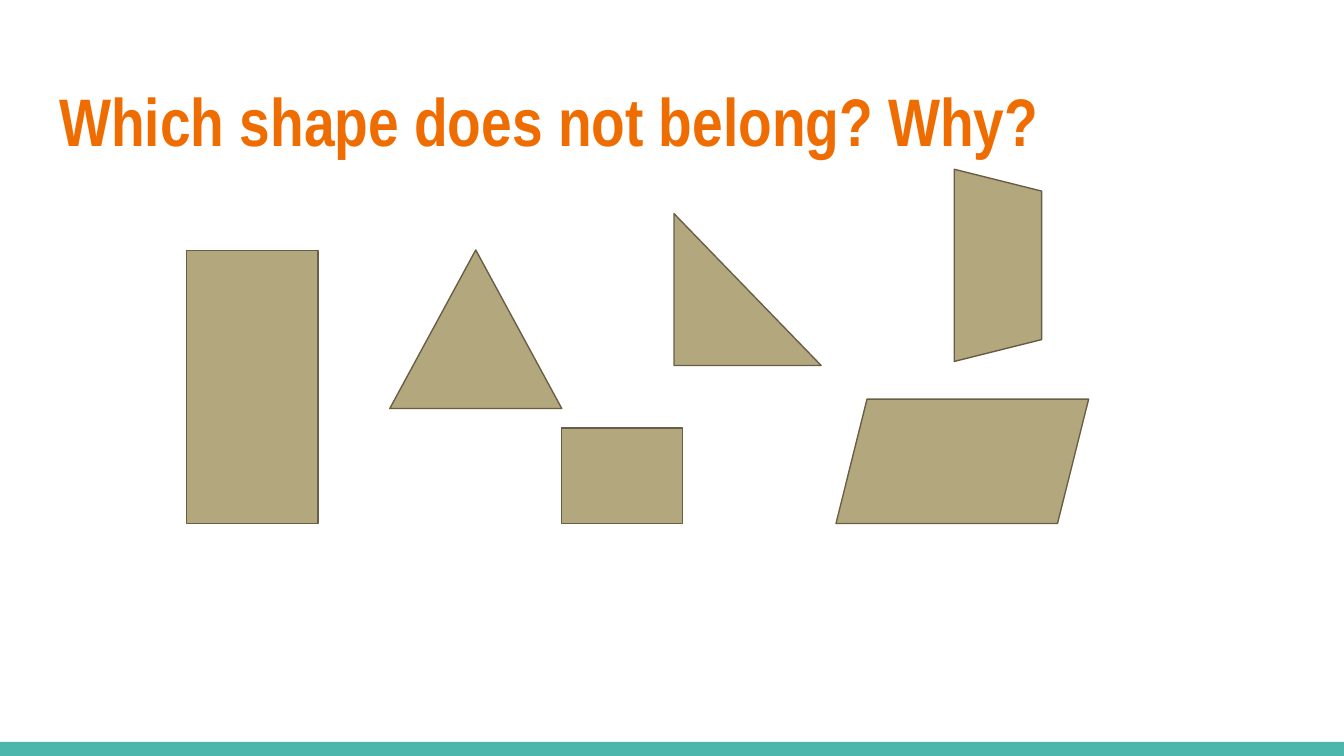
from pptx import Presentation
from pptx.dml.color import RGBColor
from pptx.enum.shapes import MSO_SHAPE as Shape
from pptx.enum.text import MSO_ANCHOR as Anchor, PP_ALIGN as Align
from pptx.util import Inches, Pt

COLORS = {"bar": "4DB6AC", "title": "EF6C00", "shape": "B3A77D", "outline": "695D46"}

deck = Presentation()
deck.slide_width = Inches(10)
deck.slide_height = deck.slide_width * 9 // 16
column = row = deck.slide_width / 100


def grid(left, top, width, height):
    return [int(left * column), int(top * row), int(width * column), int(height * row)]


def add_figure(kind, place, fill, outline=None, rotation=0):
    figure = page.shapes.add_shape(kind, *grid(*place))
    figure.shadow.inherit = False
    figure.rotation = rotation
    figure.fill.solid()
    figure.fill.fore_color.rgb = RGBColor.from_string(COLORS[fill])
    if outline:
        figure.line.color.rgb = RGBColor.from_string(COLORS[outline])
        figure.line.width = Pt(0.75)
    else:
        figure.line.fill.background()


page = deck.slides.add_slide(deck.slide_layouts[5])
add_figure(Shape.RECTANGLE, (0, 55.2, 100, 1.05), "bar")

title = page.shapes.title
title.left, title.top, title.width, title.height = grid(3.4, 4.9, 93.2, 7.7)
box = title.text_frame
box_format = {"vertical_anchor": Anchor.MIDDLE, "word_wrap": True}
box_format.update({f"margin_{side}": Inches(0.1) for side in ("left", "top", "right", "bottom")})
for name, value in box_format.items():
    setattr(box, name, value)

para = box.paragraphs[0]
para.alignment = Align.LEFT
para.line_spacing = 1.05
span = para.add_run()
span.text = "Which shape does not belong? Why?"
for name, value in {"name": "Arial Narrow", "size": Pt(36), "bold": True}.items():
    setattr(span.font, name, value)
span.font.color.rgb = RGBColor.from_string(COLORS["title"])

figures = [
    (Shape.RECTANGLE, (8.6, 23.9, 20.3, 9.8), 90),
    (Shape.PARALLELOGRAM, (62.2, 29.7, 18.8, 9.25), 0),
    (Shape.TRAPEZOID, (67.1, 16.5, 14.3, 6.5), 90),
    (Shape.ISOSCELES_TRIANGLE, (29, 18.6, 12.8, 11.8), 0),
    (Shape.RIGHT_TRIANGLE, (50.15, 15.9, 10.95, 11.3), 0),
    (Shape.RECTANGLE, (41.8, 31.85, 9, 7.1), 0),
]
for kind, place, rotation in figures:
    add_figure(kind, place, "shape", "outline", rotation)

deck.save("out.pptx")
